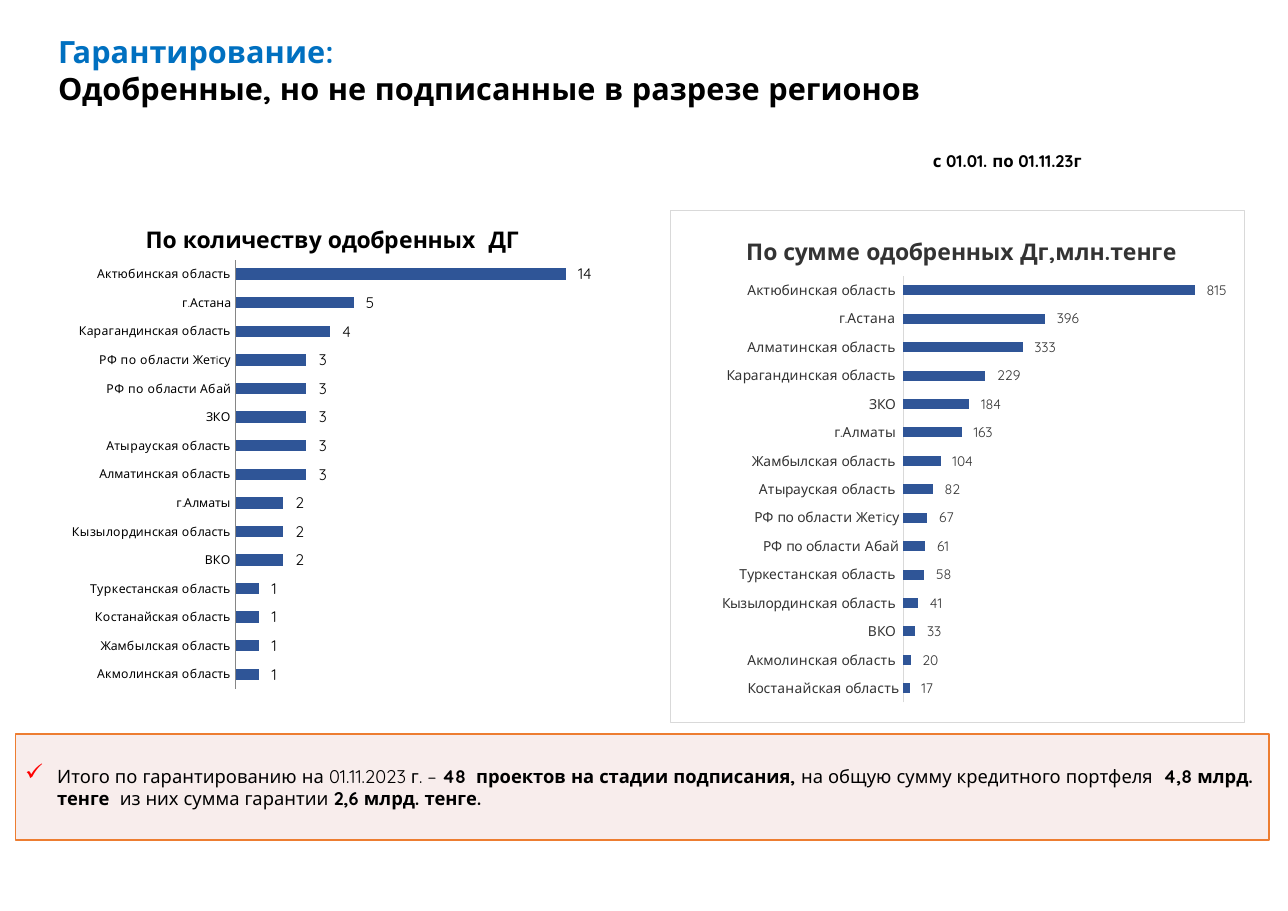
from pptx import Presentation, oxml, util as u
from pptx.chart.data import CategoryChartData
from pptx.dml.color import RGBColor
from pptx.enum import chart as ch, shapes, text
from pptx.oxml.ns import nsdecls, qn

Cm, Pt = u.Cm, u.Pt
FONT = "Quicksand"
HUES = {"black": "000000", "grey": "333333", "blue": "0070C0", "bar": "2F5597",
        "axis": "868686", "pale": "D9D9D9", "white": "FFFFFF",
        "pink": "F2DCDB", "orange": "ED7D31", "red": "FF0000"}
FORMAT = r'_-* #\ ##0_р_._-;\-* #\ ##0_р_._-;_-* "-"'

COUNTS = [
    ("Акмолинская область", 1), ("Жамбылская область", 1),
    ("Костанайская область", 1), ("Туркестанская область", 1), ("ВКО", 2),
    ("Кызылординская область", 2), ("г.Алматы", 2), ("Алматинская область", 3),
    ("Атырауская область", 3), ("ЗКО", 3), ("РФ по области Абай", 3),
    ("РФ по области Жетiсу", 3), ("Карагандинская область", 4),
    ("г.Астана", 5), ("Актюбинская область", 14)]
SUMS = [
    ("Костанайская область", 17), (" Акмолинская область ", 20), (" ВКО ", 33),
    (" Кызылординская область ", 41), (" Туркестанская область ", 58),
    ("РФ по области Абай", 61), ("РФ по области Жетiсу", 67),
    (" Атырауская область ", 82), (" Жамбылская область ", 104),
    (" г.Алматы ", 163), (" ЗКО ", 184), (" Карагандинская область ", 229),
    (" Алматинская область ", 333), (" г.Астана ", 396),
    (" Актюбинская область ", 815)]


def rgb(hue):
    return RGBColor.from_string(HUES[hue])


def style(font, size, hue="black", bold=False):
    font.name, font.size, font.bold = FONT, Pt(size), bold
    font.color.rgb = rgb(hue)


def write(para, words, **form):
    """Add a run of text; the keywords go to style()."""
    run = para.add_run()
    run.text = words
    style(run.font, **form)


def head(slide, box):
    frame = slide.shapes.add_textbox(*box).text_frame
    frame.word_wrap = True
    write(frame.paragraphs[0], "Гарантирование:", size=20, hue="blue", bold=True)
    write(frame.add_paragraph(), "Одобренные, но не подписанные в разрезе регионов",
          size=20, bold=True)


def period(slide, box):
    frame = slide.shapes.add_textbox(*box).text_frame
    frame.word_wrap = False
    write(frame.paragraphs[0], "с 01.01. по 01.11.23г", size=11, bold=True)


def place(node, x, y, w=None, h=None):
    """Set a manual layout, in shares of the chart, on a title or plot area."""
    old = node.find(qn("c:layout"))
    spot = 0
    if old is not None:
        spot = node.index(old)
        node.remove(old)
    parts = [("xMode", "edge"), ("yMode", "edge"), ("x", x), ("y", y)]
    if w:
        parts = [("layoutTarget", "inner")] + parts + [("w", w), ("h", h)]
    body = "".join(f'<c:{tag} val="{val}"/>' for tag, val in parts)
    node.insert(spot, oxml.parse_xml(
        f'<c:layout {nsdecls("c")}><c:manualLayout>{body}</c:manualLayout></c:layout>'))


def back(chart, framed):
    """Give the chart a white framed ground, or none."""
    fill = line = "<a:noFill/>"
    if framed:
        fill, line = (f'<a:solidFill><a:srgbClr val="{HUES[hue]}"/></a:solidFill>'
                      for hue in ("white", "pale"))
    chart._chartSpace.chart.addnext(oxml.parse_xml(
        f'<c:spPr {nsdecls("c", "a")}>{fill}<a:ln w="9525">{line}</a:ln></c:spPr>'))


def bars(slide, box, title, rows, top, gap, plot, spot, sizes, hue, edge, framed):
    data = CategoryChartData(number_format=FORMAT)
    data.categories = [name for name, _ in rows]
    data.add_series("Series 1", [val for _, val in rows])
    chart = slide.shapes.add_chart(
        ch.XL_CHART_TYPE.BAR_CLUSTERED, *box, data).chart
    chart.has_legend = False
    style(chart.font, 10)
    back(chart, framed)

    chart.has_title = True
    write(chart.chart_title.text_frame.paragraphs[0], title,
          size=15, hue=hue, bold=True)
    chart.chart_title.include_in_layout = False
    place(chart.chart_title._element, *spot)
    place(chart._chartSpace.chart.plotArea, *plot)

    cats, vals = chart.category_axis, chart.value_axis
    cats.major_tick_mark = ch.XL_TICK_MARK.NONE
    cats.has_major_gridlines = vals.has_major_gridlines = False
    cats.format.line.color.rgb = rgb(edge)
    cats.format.line.width = Pt(0.75)
    style(cats.tick_labels.font, sizes[0], hue)
    vals.visible = False
    vals.minimum_scale, vals.maximum_scale = 0, top

    group = chart.plots[0]
    group.gap_width = gap
    group.vary_by_categories = False
    fill = group.series[0].format.fill
    fill.solid()
    fill.fore_color.rgb = rgb("bar")
    group.has_data_labels = True
    tags = group.data_labels
    tags.show_value = True
    tags.number_format, tags.number_format_is_linked = FORMAT, False
    tags.position = ch.XL_LABEL_POSITION.OUTSIDE_END
    style(tags.font, sizes[1], hue)


def total(slide, box):
    panel = slide.shapes.add_shape(shapes.MSO_SHAPE.RECTANGLE, *box)
    panel.shadow.inherit = False
    panel.fill.solid()
    panel.fill.fore_color.rgb = rgb("pink")
    tint = panel.fill._xPr.find(".//" + qn("a:srgbClr"))
    tint.append(oxml.parse_xml(f'<a:alpha {nsdecls("a")} val="50000"/>'))
    panel.line.color.rgb = rgb("orange")
    panel.line.width = Pt(1)

    frame = panel.text_frame
    frame.word_wrap = True
    frame.vertical_anchor = text.MSO_ANCHOR.MIDDLE
    frame.margin_left = frame.margin_right = Cm(0.2)
    frame.margin_top = frame.margin_bottom = Cm(0.1)
    para = frame.paragraphs[0]
    para.alignment = text.PP_ALIGN.LEFT
    para.space_after = Pt(6)
    props = para._p.get_or_add_pPr()
    props.set("marL", str(Cm(0.76)))
    props.set("indent", str(Cm(-0.74)))
    for tag in (f'buClr {nsdecls("a")}><a:srgbClr val="{HUES["red"]}"/></a:buClr',
                f'buSzPct {nsdecls("a")} val="125000"/',
                f'buChar {nsdecls("a")} char="✓"/'):
        props.append(oxml.parse_xml(f"<a:{tag}>"))
    for words, bold in [
            ("Итого по гарантированию на 01.11.2023 г. – ", False),
            ("48  проектов на стадии подписания, ", True),
            ("на общую сумму кредитного портфеля  ", False),
            ("4,8 млрд. тенге  ", True),
            ("из них сумма гарантии", False),
            (" 2,6 млрд. тенге.", True)]:
        write(para, words, size=12, bold=bold)


def main():
    deck = Presentation()
    deck.slide_width, deck.slide_height = Cm(29.7), Cm(21)
    slide = deck.slides.add_slide(deck.slide_layouts[6])
    period(slide, (Cm(21.26), Cm(3.35), Cm(4.37), Cm(0.74)))
    head(slide, (Cm(1.09), Cm(0.64), Cm(20.57), Cm(2.82)))
    total(slide, (Cm(0.36), Cm(16.92), Cm(28.9), Cm(2.44)))
    bars(slide, (Cm(0.36), Cm(4.57), Cm(14.5), Cm(11.84)),
         "По количеству одобренных  ДГ", COUNTS, top=16, gap=150,
         plot=(0.35, 0.12, 0.6, 0.835), spot=(0.2, 0.04), sizes=(8, 10),
         hue="black", edge="axis", framed=False)
    bars(slide, (Cm(15.44), Cm(4.83), Cm(13.28), Cm(11.84)),
         "По сумме одобренных Дг,млн.тенге", SUMS, top=900, gap=182,
         plot=(0.406, 0.129, 0.56, 0.832), spot=(0.125, 0.04), sizes=(9, 9),
         hue="grey", edge="pale", framed=True)
    deck.save("out.pptx")


if __name__ == "__main__":
    main()
